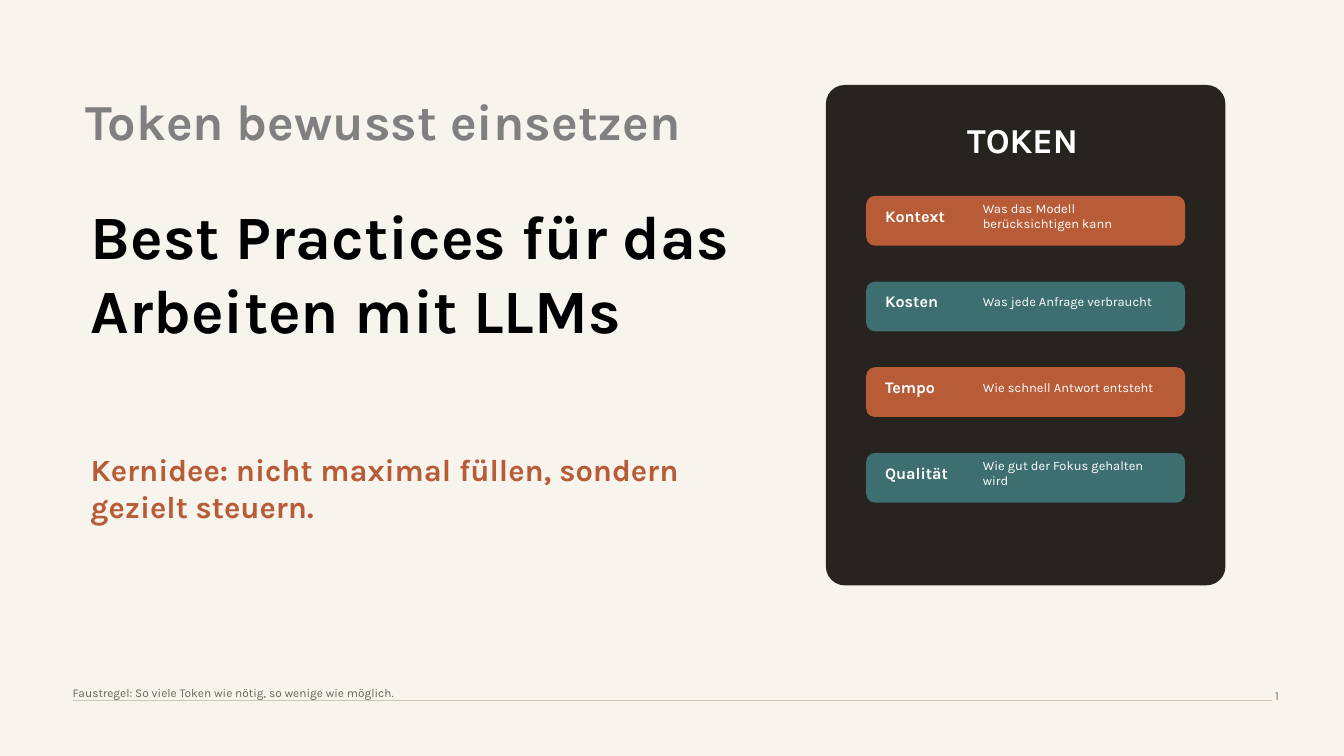
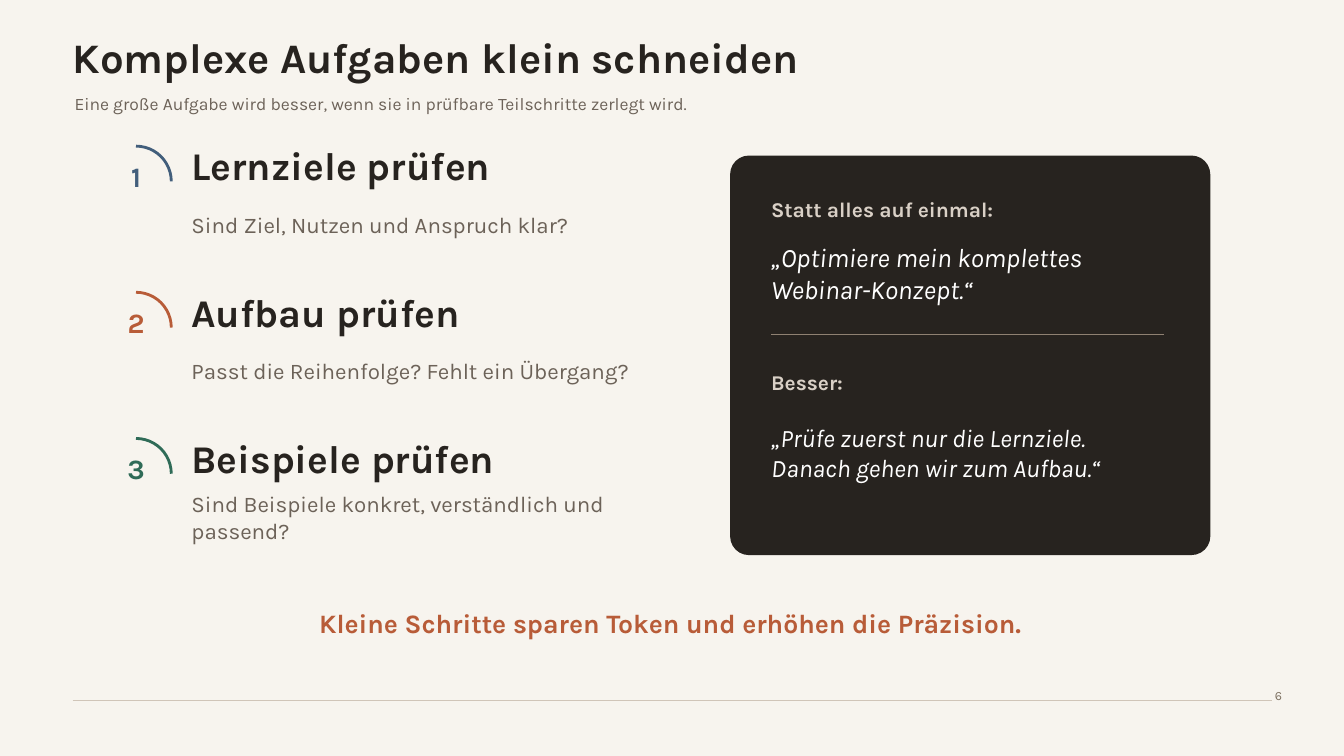
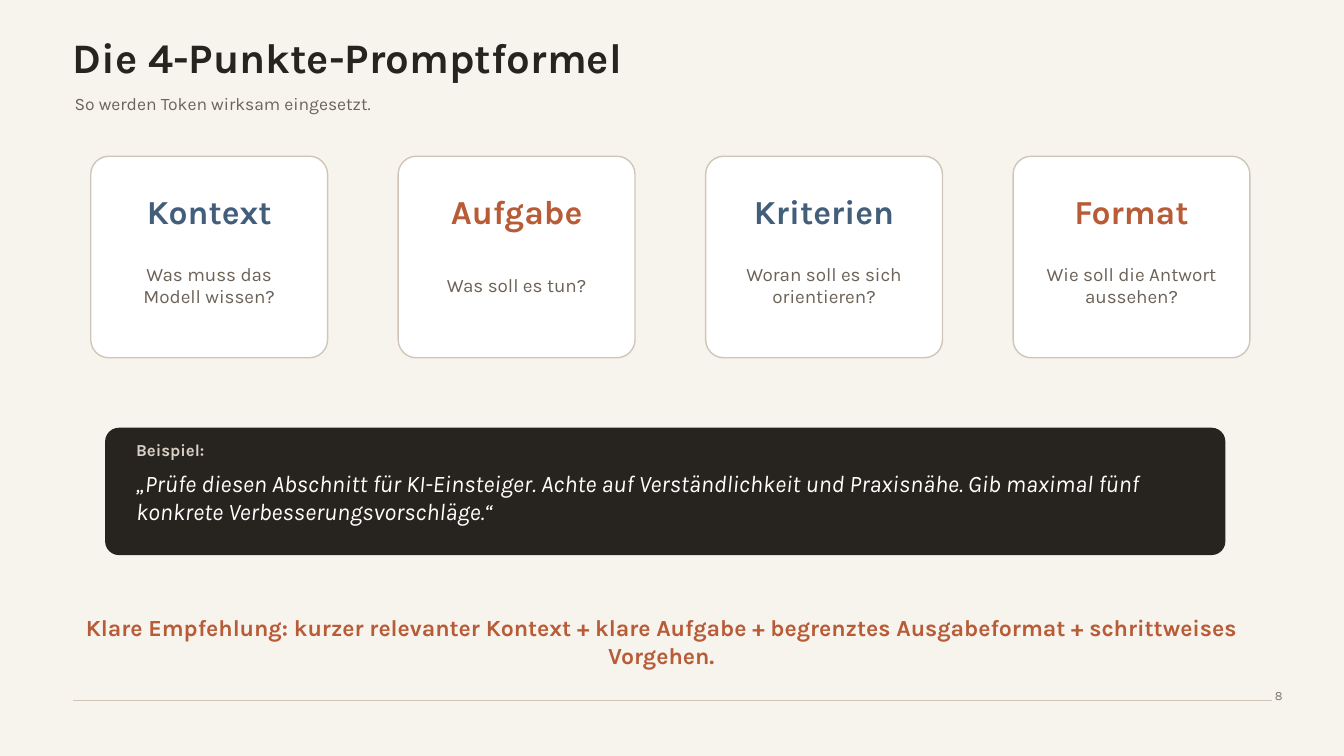
from pptx import Presentation
from pptx.dml.color import RGBColor
from pptx.enum.shapes import MSO_CONNECTOR, MSO_SHAPE
from pptx.enum.text import MSO_ANCHOR, MSO_AUTO_SIZE, PP_ALIGN
from pptx.oxml.ns import qn
from pptx.util import Inches, Pt
from lxml.etree import SubElement

FONT = "Karla"
CELL = Inches(0.1)
COLS, ROWS = 133.33, 75
C = {
    "paper": "F7F4EE", "ink": "27231F", "white": "FFFFFF", "black": "000000",
    "grey": "808080", "muted": "6C6258", "page": "827667", "rule": "D0C5B8",
    "divider": "8F8172", "sand": "D9D0C6", "rust": "B85C38", "teal": "3D6E70",
    "blue": "425E7B", "green": "2F6B57",
}


def rgb(name):
    return RGBColor.from_string(C[name])


def cells(*values):
    return [round(v * CELL) for v in values]


def inside(box, dx, dy, w, h):
    return box[0] + dx, box[1] + dy, w, h


def add_text(s, text, box, size, color, bold=False, italic=False,
             align=PP_ALIGN.LEFT, anchor=MSO_ANCHOR.MIDDLE, margin=(0, 0), sp=None):
    if sp is None:
        sp = s.shapes.add_textbox(*cells(*box))
    else:
        sp.left, sp.top, sp.width, sp.height = cells(*box)
    tf = sp.text_frame
    tf.word_wrap = True
    tf.auto_size = MSO_AUTO_SIZE.NONE
    tf.vertical_anchor = anchor
    tf.margin_left, tf.margin_top = tf.margin_right, tf.margin_bottom = cells(*margin)
    p = tf.paragraphs[0]
    p.alignment = align
    r = p.add_run()
    r.text = text
    r.font.name, r.font.size = FONT, Pt(size)
    r.font.bold, r.font.italic = bold, italic
    r.font.color.rgb = rgb(color)


def add_centered(s, text, box, size, color, bold=True):
    add_text(s, text, box, size, color, bold=bold, align=PP_ALIGN.CENTER)


def add_panel(s, box, radius, fill, line=None):
    sp = s.shapes.add_shape(MSO_SHAPE.ROUNDED_RECTANGLE, *cells(*box))
    sp.adjustments[0] = radius / min(box[2:])
    sp.shadow.inherit = False
    sp.fill.solid()
    sp.fill.fore_color.rgb = rgb(fill)
    sp.line.color.rgb = rgb(line or fill)
    sp.line.width = Pt(1)


def add_rule(s, x, y, w, color):
    line = s.shapes.add_connector(MSO_CONNECTOR.STRAIGHT, *cells(x, y, x + w, y))
    line.line.color.rgb = rgb(color)
    line.line.width = Pt(1)
    SubElement(line.element.spPr, qn("a:effectLst"))
    return line


def style_master(prs, s):
    master = prs.slide_master
    master.background.fill.solid()
    master.background.fill.fore_color.rgb = rgb("paper")
    rule = add_rule(s, 7.2, 69.5, 119, "rule")
    master.shapes.element.append(rule.element)


def new_slide(prs, number):
    s = prs.slides.add_slide(prs.slide_layouts[5])
    add_text(s, str(number), (125.5, 67.8, 7.8, 3.3), 9, "page",
             anchor=MSO_ANCHOR.TOP, margin=(1, 0.5))
    return s


def add_header(s, title, subtitle):
    add_text(s, title, (7.2, 3.5, 86, 4.2), 30, "ink", bold=True, sp=s.shapes.title)
    add_text(s, subtitle, (7.4, 8.5, 106, 3.5), 12.5, "muted")


def add_token_panel(s, box, heading, rows):
    add_panel(s, box, 1.8, "ink")
    add_centered(s, heading, inside(box, 4.2, 3, 30.5, 4.6), 25, "white")
    for i, (label, detail) in enumerate(rows):
        row = inside(box, 4, 11 + i * 8.5, 31.5, 4.8)
        add_panel(s, row, 0.8, ("rust", "teal")[i % 2])
        add_text(s, label, inside(row, 1.8, 0.9, 9.5, 2), 11.5, "white", bold=True)
        add_text(s, detail, inside(row, 11.5, 0.9, 18, 2), 9.2, "white")


def add_step(s, box, number, color, heading, question):
    arc = s.shapes.add_shape(MSO_SHAPE.ARC, *cells(*inside(box, 0, 0, 7, 7)))
    arc.shadow.inherit = False
    arc.fill.background()
    arc.line.color.rgb = rgb(color)
    arc.line.width = Pt(2)
    add_centered(s, str(number), inside(box, 0.8, 1.2, 5.4, 3.5), 20, color)
    add_text(s, heading, inside(box, 9, 0.4, 40, 3), 28, "ink", bold=True)
    add_text(s, question, inside(box, 9, 4.5, 44, 6.5), 16, "muted")


def add_comparison(s, box, before, after):
    add_panel(s, box, 1.8, "ink")
    add_rule(s, box[0] + 4, box[1] + 17.7, 39, "divider")
    for (label, quote), label_y, quote_y, quote_h, size in (
            (before, 4, 8.8, 5.5, 19), (after, 21.2, 25.8, 7.2, 18)):
        add_text(s, label, inside(box, 4, label_y, 40, 2.5), 15, "sand", bold=True)
        add_text(s, quote, inside(box, 4, quote_y, 39, quote_h), size, "white", italic=True)


def add_card(s, box, color, heading, question):
    add_panel(s, box, 1.8, "white", "rule")
    add_centered(s, heading, inside(box, 2, 4, 19.5, 2.8), 24, color)
    add_centered(s, question, inside(box, 2.5, 10, 18.5, 5.5), 13.5, "muted", bold=False)


def add_example(s, box, label, quote):
    add_panel(s, box, 1.3, "ink")
    add_text(s, label, inside(box, 3, 1.1, 11, 2), 12, "sand", bold=True)
    add_text(s, quote, inside(box, 3, 4.7, 103.5, 4.2), 17, "white", italic=True)


def build_cover(prs):
    s = new_slide(prs, 1)
    style_master(prs, s)
    add_text(s, "Token bewusst einsetzen", (8.5, 8.2, 71, 7.5), 36, "grey", bold=True)
    add_text(s, "Best Practices für das Arbeiten mit LLMs", (9, 17.5, 66.1, 19), 44,
             "black", bold=True, sp=s.shapes.title)
    add_text(s, "Kernidee: nicht maximal füllen, sondern gezielt steuern.",
             (9, 46, 62, 4.8), 22, "rust", bold=True)
    add_text(s, "Faustregel: So viele Token wie nötig, so wenige wie möglich.",
             (7.2, 67.8, 80, 1.8), 8.5, "muted")
    add_token_panel(s, (82, 8.5, 39.5, 49.5), "TOKEN", [
        ("Kontext", "Was das Modell berücksichtigen kann"),
        ("Kosten", "Was jede Anfrage verbraucht"),
        ("Tempo", "Wie schnell Antwort entsteht"),
        ("Qualität", "Wie gut der Fokus gehalten wird"),
    ])


def build_steps(prs):
    s = new_slide(prs, 6)
    add_header(s, "Komplexe Aufgaben klein schneiden",
               "Eine große Aufgabe wird besser, wenn sie in prüfbare Teilschritte zerlegt wird.")
    steps = [
        ("blue", "Lernziele prüfen", "Sind Ziel, Nutzen und Anspruch klar?"),
        ("rust", "Aufbau prüfen", "Passt die Reihenfolge? Fehlt ein Übergang?"),
        ("green", "Beispiele prüfen", "Sind Beispiele konkret, verständlich und passend?"),
    ]
    for i, step in enumerate(steps):
        add_step(s, (10, 14.5 + i * 14.5, 53, 11), i + 1, *step)
    add_comparison(s, (72.5, 15.5, 47.5, 39.5),
                   ("Statt alles auf einmal:", "„Optimiere mein komplettes Webinar-Konzept.“"),
                   ("Besser:", "„Prüfe zuerst nur die Lernziele. Danach gehen wir zum Aufbau.“"))
    add_centered(s, "Kleine Schritte sparen Token und erhöhen die Präzision.",
                 (22, 60.4, 89, 2.8), 19, "rust")


def build_formula(prs):
    s = new_slide(prs, 8)
    add_header(s, "Die 4-Punkte-Promptformel", "So werden Token wirksam eingesetzt.")
    cards = [
        ("Kontext", "Was muss das Modell wissen?"),
        ("Aufgabe", "Was soll es tun?"),
        ("Kriterien", "Woran soll es sich orientieren?"),
        ("Format", "Wie soll die Antwort aussehen?"),
    ]
    for i, card in enumerate(cards):
        add_card(s, (9 + i * 30.5, 15.5, 23.5, 20), ("blue", "rust")[i % 2], *card)
    add_example(s, (10.5, 42.5, 111, 12.5), "Beispiel:",
                "„Prüfe diesen Abschnitt für KI-Einsteiger. Achte auf Verständlichkeit und "
                "Praxisnähe. Gib maximal fünf konkrete Verbesserungsvorschläge.“")
    add_centered(s, "Klare Empfehlung: kurzer relevanter Kontext + klare Aufgabe + "
                 "begrenztes Ausgabeformat + schrittweises Vorgehen.",
                 (4.5, 62.2, 122.2, 2.8), 16.5, "rust")


def main():
    prs = Presentation()
    prs.slide_width, prs.slide_height = cells(COLS, ROWS)
    for build in (build_cover, build_steps, build_formula):
        build(prs)
    prs.save("out.pptx")


if __name__ == "__main__":
    main()
